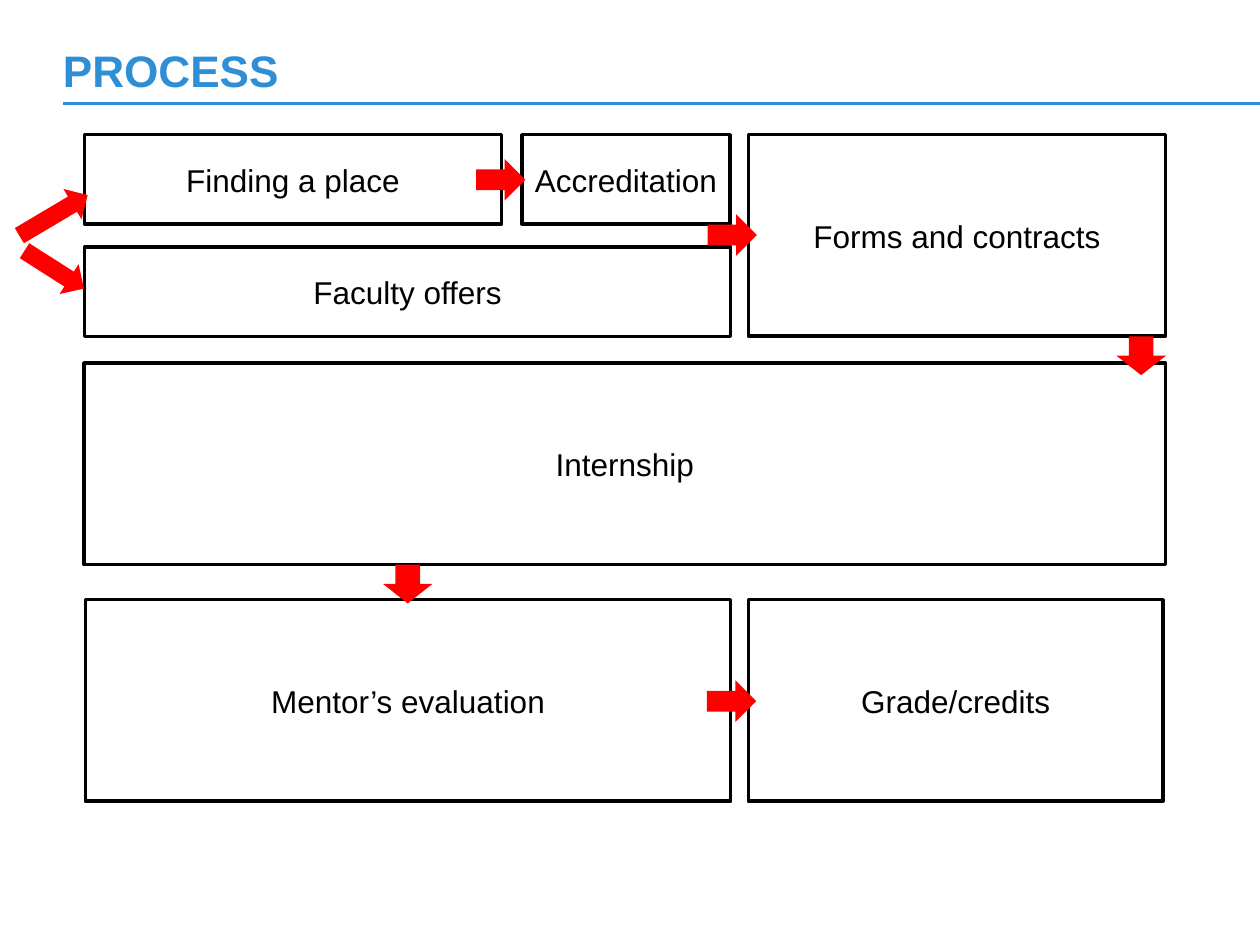
from typing import NamedTuple

from lxml.etree import SubElement
from pptx import Presentation
from pptx.dml.color import RGBColor
from pptx.enum.shapes import MSO_CONNECTOR, MSO_SHAPE
from pptx.enum.text import MSO_ANCHOR, PP_ALIGN
from pptx.oxml.ns import qn
from pptx.util import Pt

BLUE, BLACK, WHITE, RED = "2E8FD6", "000000", "FFFFFF", "FF0000"
LEFT, RIGHT = 48.3, 427.7
TOP, LOW, MID, END = 77, 141.2, 207.4, 342.7
SHORT, TALL = 51.1, 115.2


class Box(NamedTuple):
    text: str
    x: float
    y: float
    w: float
    h: float


class Arrow(NamedTuple):
    x: float
    y: float
    w: float = 28.2
    h: float = 23.8
    kind: MSO_SHAPE = MSO_SHAPE.RIGHT_ARROW
    turn: float = 0


BOXES = [
    Box("Finding a place", LEFT, TOP, 238.3, SHORT),
    Box("Faculty offers", LEFT, LOW, 369.3, SHORT),
    Box("Accreditation", 298.2, TOP, 119, SHORT),
    Box("Forms and contracts", RIGHT, TOP, 238.3, TALL),
    Box("Internship", 48, MID, 618, TALL),
    Box("Mentor’s evaluation", 48.8, END, 368.8, TALL),
    Box("Grade/credits", RIGHT, END, 236.9, TALL),
]

ARROWS = [
    Arrow(10.9, 144, 40.3, 20.2, turn=32.5),
    Arrow(403.9, 388.8),
    Arrow(272, 90.8),
    Arrow(404.3, 122.4),
    Arrow(7.9, 113, 45.4, 20.2, turn=329.3),
    Arrow(638, 192.2, h=22.2, kind=MSO_SHAPE.DOWN_ARROW),
    Arrow(218.9, 322.6, h=22.2, kind=MSO_SHAPE.DOWN_ARROW),
]


def tint(code: str) -> RGBColor:
    return RGBColor.from_string(code)


def style(frame, size: float, code: str, bold: bool = False) -> None:
    frame.vertical_anchor = MSO_ANCHOR.MIDDLE
    font = frame.paragraphs[0].runs[0].font
    font.name, font.size, font.bold = "Arial", Pt(size), bold
    font.color.rgb = tint(code)


def draw_shape(slide, kind: MSO_SHAPE, item, fill: str):
    shape = slide.shapes.add_shape(
        kind, Pt(item.x), Pt(item.y), Pt(item.w), Pt(item.h))
    shape.shadow.inherit = False
    shape.fill.solid()
    shape.fill.fore_color.rgb = tint(fill)
    return shape


def draw_box(slide, box: Box) -> None:
    shape = draw_shape(slide, MSO_SHAPE.RECTANGLE, box, WHITE)
    shape.line.color.rgb = tint(BLACK)
    shape.line.width = Pt(2)
    frame = shape.text_frame
    frame.text = box.text
    frame.word_wrap = False
    frame.paragraphs[0].alignment = PP_ALIGN.CENTER
    style(frame, 18, BLACK)


def draw_arrow(slide, arrow: Arrow) -> None:
    shape = draw_shape(slide, arrow.kind, arrow, RED)
    shape.line.fill.background()
    shape.rotation = arrow.turn


def draw_title(slide, text: str) -> None:
    rule = slide.shapes.add_connector(
        MSO_CONNECTOR.STRAIGHT, Pt(36), Pt(59), Pt(720), Pt(59))
    rule.line.color.rgb = tint(BLUE)
    rule.line.width = Pt(1.5)
    SubElement(rule._element.spPr, qn("a:effectLst"))
    frame = slide.shapes.add_textbox(
        Pt(36), Pt(28.8), Pt(648), Pt(22.3)).text_frame
    frame.text = text
    frame.word_wrap = True
    frame.margin_left = frame.margin_right = 0
    frame.margin_top = frame.margin_bottom = 0
    style(frame, 25.2, BLUE, bold=True)


def main() -> None:
    deck = Presentation()
    deck.slide_width, deck.slide_height = Pt(720), Pt(540)
    slide = deck.slides.add_slide(deck.slide_layouts[6])

    # Heading with its rule
    draw_title(slide, "PROCESS")

    # Steps, then the arrows on top of them
    for box in BOXES:
        draw_box(slide, box)
    for arrow in ARROWS:
        draw_arrow(slide, arrow)

    deck.save("out.pptx")


if __name__ == "__main__":
    main()
